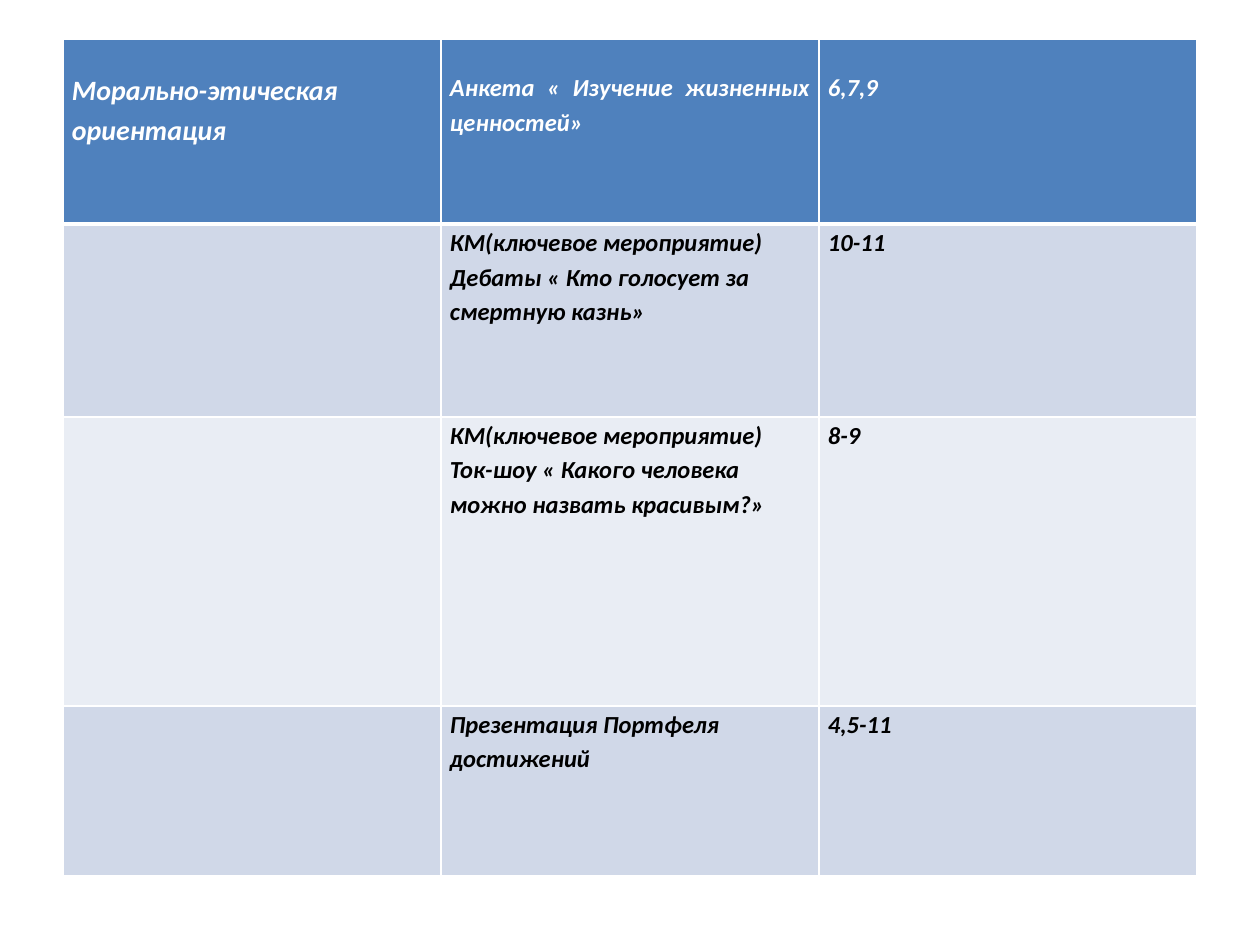
"""Build a slide with a table of moral and ethical orientation activities."""
import lxml.etree
import pptx
import pptx.dml.color
import pptx.enum.text
import pptx.oxml.ns
import pptx.util

RGBColor = pptx.dml.color.RGBColor
ALIGN = pptx.enum.text.PP_ALIGN

WHITE = RGBColor(0xFF, 0xFF, 0xFF)
BLACK = RGBColor(0x00, 0x00, 0x00)
HEADER_BLUE = RGBColor(0x4F, 0x81, 0xBD)
BAND_DARK = RGBColor(0xD0, 0xD8, 0xE8)
BAND_LIGHT = RGBColor(0xE9, 0xED, 0xF4)

ROWS = [
    ("Морально-этическая ориентация", "Анкета « Изучение жизненных ценностей»", "6,7,9"),
    ("", "КМ(ключевое мероприятие) Дебаты « Кто голосует за смертную казнь»", "10-11"),
    ("", "КМ(ключевое мероприятие) Ток-шоу « Какого человека можно назвать красивым?»", "8-9"),
    ("", "Презентация Портфеля достижений", "4,5-11"),
]
ROW_HEIGHTS = [185, 193, 289, 170]
COLUMN_WIDTH = 378
TABLE_LEFT, TABLE_TOP = 63, 39
HEADER_MARGIN = 30
SIDE_MARGIN = 9
SLIDE_WIDTH, SLIDE_HEIGHT = 1260, 945
PX_PER_INCH = 126
FONT = {"name": "Calibri", "bold": True, "italic": True}


def px(length):
    """Turn px into EMU."""
    return pptx.util.Emu(round(length * 914400 / PX_PER_INCH))


def set_borders(cell, widths):
    """Give the cell white borders of the given widths in points."""
    properties = cell._tc.get_or_add_tcPr()
    qn = pptx.oxml.ns.qn
    for side, width in widths.items():
        line = lxml.etree.SubElement(properties, qn(f"a:ln{side}"), w=str(pptx.util.Pt(width)))
        fill = lxml.etree.SubElement(line, qn("a:solidFill"))
        lxml.etree.SubElement(fill, qn("a:srgbClr"), val=str(WHITE))


def fill_cell(cell, text, row, column):
    """Set the borders, fill, margins and text of one cell."""
    header = row == 0
    set_borders(cell, {"L": 1, "R": 1, "T": 3 if row == 1 else 1, "B": 3 if header else 1})
    cell.fill.solid()
    cell.fill.fore_color.rgb = HEADER_BLUE if header else (BAND_LIGHT, BAND_DARK)[row % 2]
    margins = {
        "margin_left": px(SIDE_MARGIN),
        "margin_right": px(SIDE_MARGIN),
        "margin_top": px(HEADER_MARGIN if header else 0),
        "margin_bottom": 0,
    }
    for name, value in margins.items():
        setattr(cell, name, value)
    if not text:
        return
    cell.text = text
    paragraph = cell.text_frame.paragraphs[0]
    paragraph.line_spacing = 1.15
    paragraph.alignment = ALIGN.JUSTIFY if header or column == 2 else ALIGN.LEFT
    font = paragraph.runs[0].font
    for name, value in FONT.items():
        setattr(font, name, value)
    font.size = pptx.util.Pt(16 if column == 0 else 14)
    font.color.rgb = WHITE if header else BLACK


def main():
    """Build and save the presentation."""
    presentation = pptx.Presentation()
    presentation.slide_width = px(SLIDE_WIDTH)
    presentation.slide_height = px(SLIDE_HEIGHT)
    slide = presentation.slides.add_slide(presentation.slide_layouts[6])
    column_count = len(ROWS[0])
    table = slide.shapes.add_table(
        len(ROWS), column_count, px(TABLE_LEFT), px(TABLE_TOP),
        px(COLUMN_WIDTH * column_count), px(sum(ROW_HEIGHTS)),
    ).table
    for column in table.columns:
        column.width = px(COLUMN_WIDTH)
    for row, (texts, height) in enumerate(zip(ROWS, ROW_HEIGHTS)):
        table.rows[row].height = px(height)
        for column, text in enumerate(texts):
            fill_cell(table.cell(row, column), text, row, column)
    presentation.save("out.pptx")


if __name__ == "__main__":
    main()
